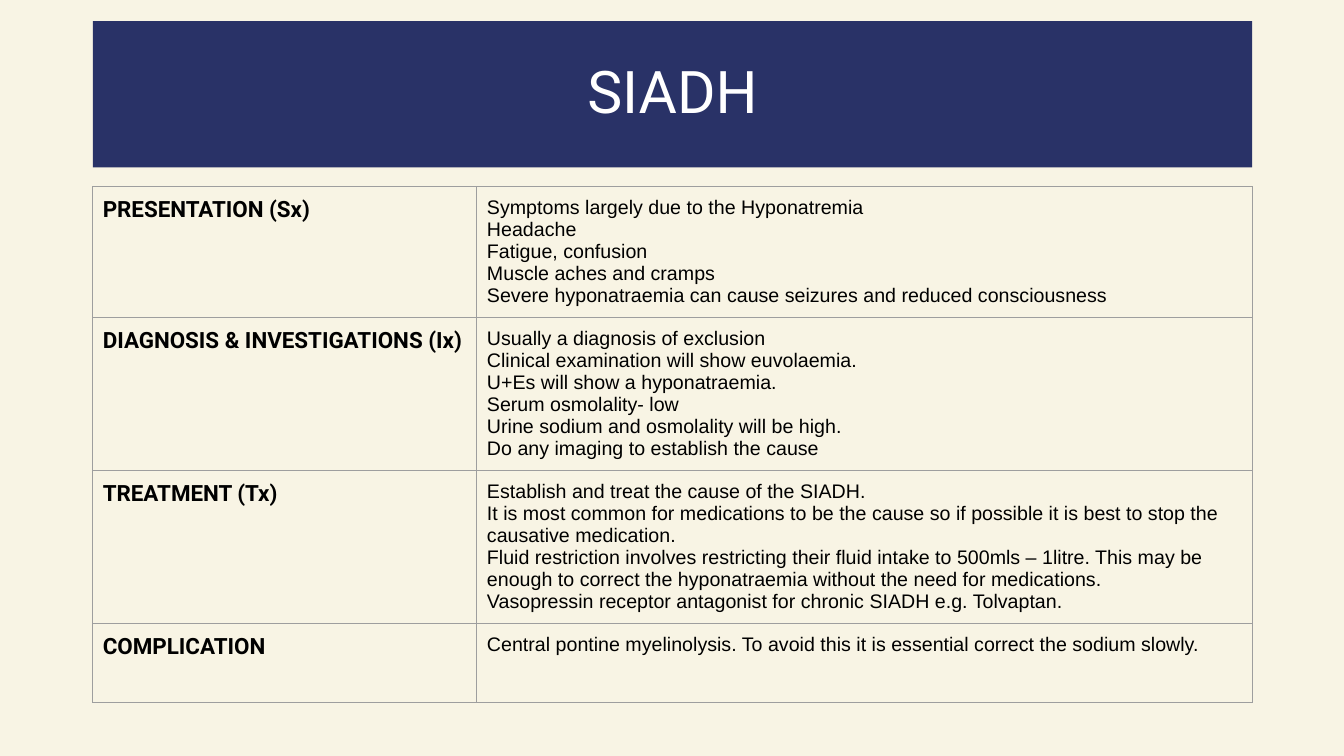
import pptx
import pptx.dml.color
import pptx.enum.text
import pptx.oxml
import pptx.oxml.ns
import pptx.util
from pptx.util import Inches

RGBColor = pptx.dml.color.RGBColor
CREAM = RGBColor(0xF8, 0xF4, 0xE4)
NAVY = RGBColor(0x29, 0x32, 0x67)
WHITE = RGBColor(0xFF, 0xFF, 0xFF)
BLACK = RGBColor(0x00, 0x00, 0x00)
GREY = RGBColor(0x9E, 0x9E, 0x9E)

LEFT, WIDTH = 0.92, 11.5
COLUMN_WIDTHS = [3.81, 7.69]

# Each row: height, heading, lines of detail
CONDITION_ROWS = [
    (1.3, "PRESENTATION (Sx)", [
        "Symptoms largely due to the Hyponatremia",
        "Headache",
        "Fatigue, confusion",
        "Muscle aches and cramps",
        "Severe hyponatraemia can cause seizures and reduced consciousness",
    ]),
    (1.52, "DIAGNOSIS & INVESTIGATIONS (Ix)", [
        "Usually a diagnosis of exclusion",
        "Clinical examination will show euvolaemia.",
        "U+Es will show a hyponatraemia.",
        "Serum osmolality- low",
        "Urine sodium and osmolality will be high.",
        "Do any imaging to establish the cause",
    ]),
    (1.52, "TREATMENT (Tx)", [
        "Establish and treat the cause of the SIADH.",
        "It is most common for medications to be the cause so if possible "
        "it is best to stop the causative medication.",
        "Fluid restriction involves restricting their fluid intake to "
        "500mls – 1litre. This may be enough to correct the hyponatraemia "
        "without the need for medications.",
        "Vasopressin receptor antagonist for chronic SIADH e.g. Tolvaptan.",
    ]),
    (0.78, "COMPLICATION", [
        "Central pontine myelinolysis. To avoid this it is essential "
        "correct the sodium slowly.",
    ]),
]


class SlideBuilder:
    """Holds the style and the current slide."""

    heading_font = "Roboto"
    body_font = "Arial"

    def __init__(self, presentation):
        self.slide = presentation.slides.add_slide(presentation.slide_layouts[5])
        self.slide.background.fill.solid()
        self.slide.background.fill.fore_color.rgb = CREAM

    def format_runs(self, text_frame, name, size, color, bold=False):
        for paragraph in text_frame.paragraphs:
            for run in paragraph.runs:
                run.font.name = name
                run.font.size = pptx.util.Pt(size)
                run.font.color.rgb = color
                run.font.bold = bold

    def title(self, text, top, height):
        shape = self.slide.shapes.title
        shape.left, shape.top = Inches(LEFT), Inches(top)
        shape.width, shape.height = Inches(WIDTH), Inches(height)
        shape.fill.solid()
        shape.fill.fore_color.rgb = NAVY
        text_frame = shape.text_frame
        text_frame.text = text
        text_frame.vertical_anchor = pptx.enum.text.MSO_ANCHOR.MIDDLE
        paragraph = text_frame.paragraphs[0]
        paragraph.alignment = pptx.enum.text.PP_ALIGN.CENTER
        paragraph.line_spacing = 0.9
        self.format_runs(text_frame, self.heading_font, 42, WHITE)

    def borders(self, cell):
        properties = cell._tc.get_or_add_tcPr()
        for index, side in enumerate(("lnL", "lnR", "lnT", "lnB")):
            line = pptx.oxml.parse_xml(
                f'<a:{side} {pptx.oxml.ns.nsdecls("a")} w="{pptx.util.Pt(0.75)}">'
                f'<a:solidFill><a:srgbClr val="{GREY}"/></a:solidFill></a:{side}>')
            properties.insert(index, line)

    def cell(self, cell, text, name, size, bold):
        cell.text_frame.text = text
        cell.margin_left = cell.margin_right = Inches(0.1)
        cell.margin_top = cell.margin_bottom = Inches(0.1)
        cell.fill.background()
        self.borders(cell)
        self.format_runs(cell.text_frame, name, size, BLACK, bold)

    def table(self, rows, top):
        height = sum(row[0] for row in rows)
        table = self.slide.shapes.add_table(
            len(rows), len(COLUMN_WIDTHS), Inches(LEFT), Inches(top),
            Inches(WIDTH), Inches(height)).table
        table.first_row = table.horz_banding = False
        for column, width in zip(table.columns, COLUMN_WIDTHS):
            column.width = Inches(width)
        for index, (row_height, heading, details) in enumerate(rows):
            table.rows[index].height = Inches(row_height)
            self.cell(table.cell(index, 0), heading, self.heading_font, 16, True)
            self.cell(table.cell(index, 1), "\n".join(details),
                      self.body_font, 14, False)


def main():
    presentation = pptx.Presentation()
    presentation.slide_width = Inches(13.33)
    presentation.slide_height = Inches(7.5)
    builder = SlideBuilder(presentation)

    # Title band
    builder.title("SIADH", 0.21, 1.45)

    # Condition summary
    builder.table(CONDITION_ROWS, 1.85)

    presentation.save("out.pptx")


if __name__ == "__main__":
    main()
